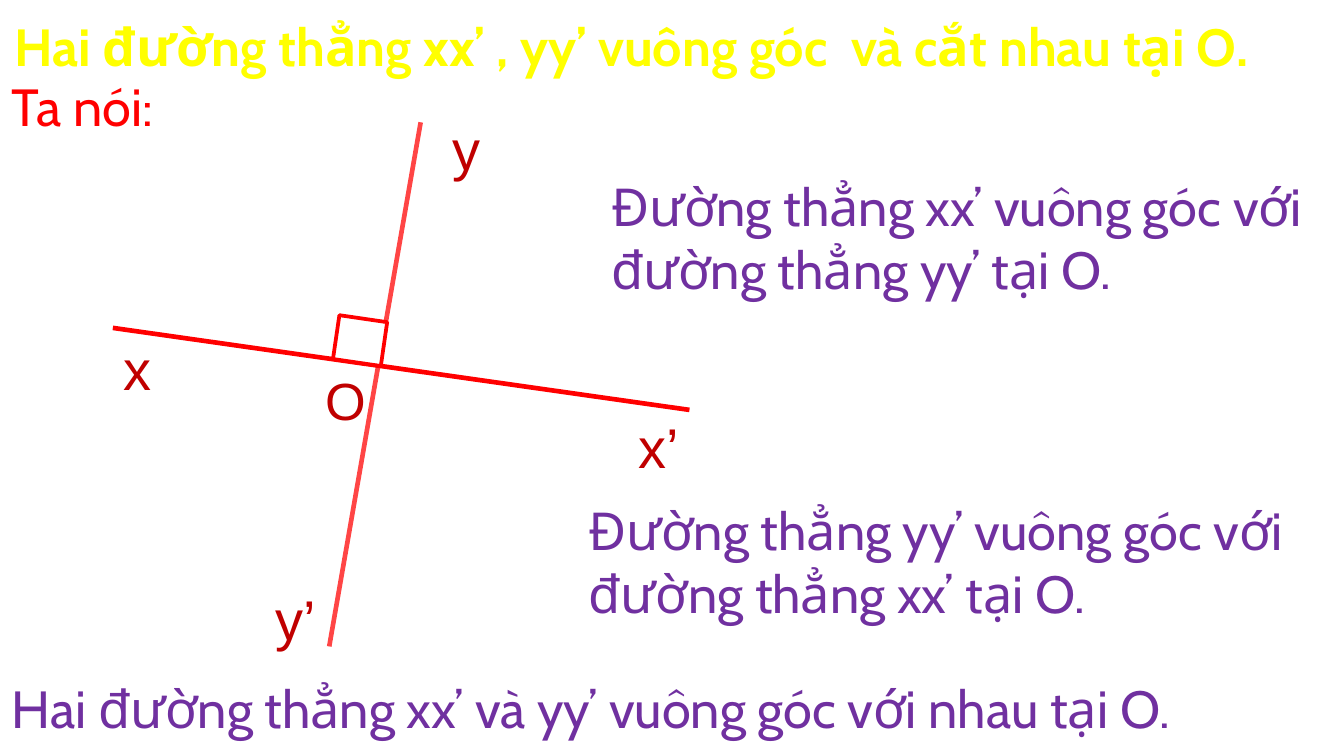
import pptx
import pptx.util
import pptx.dml.color
import pptx.enum.shapes
import pptx.enum.text
import pptx.oxml
import pptx.oxml.ns

COLORS = {
    "white": "FFFFFF",
    "red": "FF0000",
    "label": "C00000",
    "title": "FFFF00",
    "statement": "7030A0",
}


def rgb(name):
    return pptx.dml.color.RGBColor.from_string(COLORS[name])


def inches(*values):
    return [pptx.util.Inches(v) for v in values]


def add_text(slide, box, text, color, size=28, font="Cabin", bold=False):
    sp = slide.shapes.add_textbox(*inches(*box))
    tf = sp.text_frame
    tf.word_wrap = True
    tf.auto_size = pptx.enum.text.MSO_AUTO_SIZE.SHAPE_TO_FIT_TEXT
    r = tf.paragraphs[0].add_run()
    r.text = text
    r.font.name = font
    r.font.size = pptx.util.Pt(size)
    r.font.bold = bold
    r.font.color.rgb = rgb(color)


def add_line(slide, start, end, alpha=None):
    line = slide.shapes.add_connector(
        pptx.enum.shapes.MSO_CONNECTOR.STRAIGHT, *inches(*start, *end))
    line.line.width = pptx.util.Pt(2.5)
    line.line.color.rgb = rgb("red")
    sp_pr = line._element.spPr
    if alpha is not None:
        clr = sp_pr.find(".//" + pptx.oxml.ns.qn("a:srgbClr"))
        clr.append(pptx.oxml.parse_xml(
            f'<a:alpha {pptx.oxml.ns.nsdecls("a")} val="{alpha * 1000}"/>'))
    sp_pr.append(pptx.oxml.parse_xml(
        f'<a:effectLst {pptx.oxml.ns.nsdecls("a")}/>'))


def add_figure(slide, x, y):
    # Lines yy' and xx'
    add_line(slide, (x + 2.31, y + 0.11), (x + 1.63, y + 4.01), alpha=73)
    add_line(slide, (x + 0.02, y + 1.64), (x + 4.31, y + 2.25))

    # Point labels
    labels = [
        ("x", 0, 1.64, 0.58, 0.6, 30),
        ("x’", 3.83, 2.22, 0.58, 0.6, 30),
        ("y", 2.45, 0, 0.58, 0.6, 30),
        ("y’", 1.13, 3.5, 0.57, 0.61, 30),
        ("O", 1.5, 1.89, 0.42, 0.57, 28),
    ]
    for text, dx, dy, w, h, size in labels:
        add_text(slide, (x + dx, y + dy, w, h), text, "label", size, "Arial")


def add_right_angle(slide, x, y, w, h):
    mark = slide.shapes.add_shape(
        pptx.enum.shapes.MSO_SHAPE.RECTANGLE, *inches(x, y, w, h))
    mark.rotation = 8.3
    mark.shadow.inherit = False
    mark.fill.solid()
    mark.fill.fore_color.rgb = rgb("white")
    mark.line.color.rgb = rgb("red")
    mark.line.width = pptx.util.Pt(2)


def add_heading(slide, x, y, w):
    add_text(slide, (x + 0.02, y, w, 0.57),
             "Hai đường thẳng xx’ , yy’ vuông góc  và cắt nhau tại O.",
             "title", bold=True)
    add_text(slide, (x, y + 0.44, 1.58, 0.57), "Ta nói:", "red")


def add_statements(slide, x, y):
    statements = [
        ("Đường thẳng xx’ vuông góc với đường thẳng yy’ tại O.",
         4.46, 0, 5.38, 1.04),
        ("Đường thẳng yy’ vuông góc với đường thẳng xx’ tại O.",
         4.29, 2.41, 5.75, 1.03),
        ("Hai đường thẳng xx’ và yy’ vuông góc với nhau tại O.",
         0, 3.73, 10.01, 0.57),
    ]
    for text, dx, dy, w, h in statements:
        add_text(slide, (x + dx, y + dy, w, h), text, "statement")


def main():
    prs = pptx.Presentation()
    prs.slide_width = pptx.util.Inches(10)
    prs.slide_height = prs.slide_width * 9 // 16
    slide = prs.slides.add_slide(prs.slide_layouts[6])
    slide.background.fill.solid()
    slide.background.fill.fore_color.rgb = rgb("white")

    add_figure(slide, 0.82, 0.8)
    add_heading(slide, -0.01, 0.06, 9.8)
    add_statements(slide, -0.01, 1.25)
    add_right_angle(slide, 2.5, 2.37, 0.36, 0.33)
    prs.save("out.pptx")


if __name__ == "__main__":
    main()
